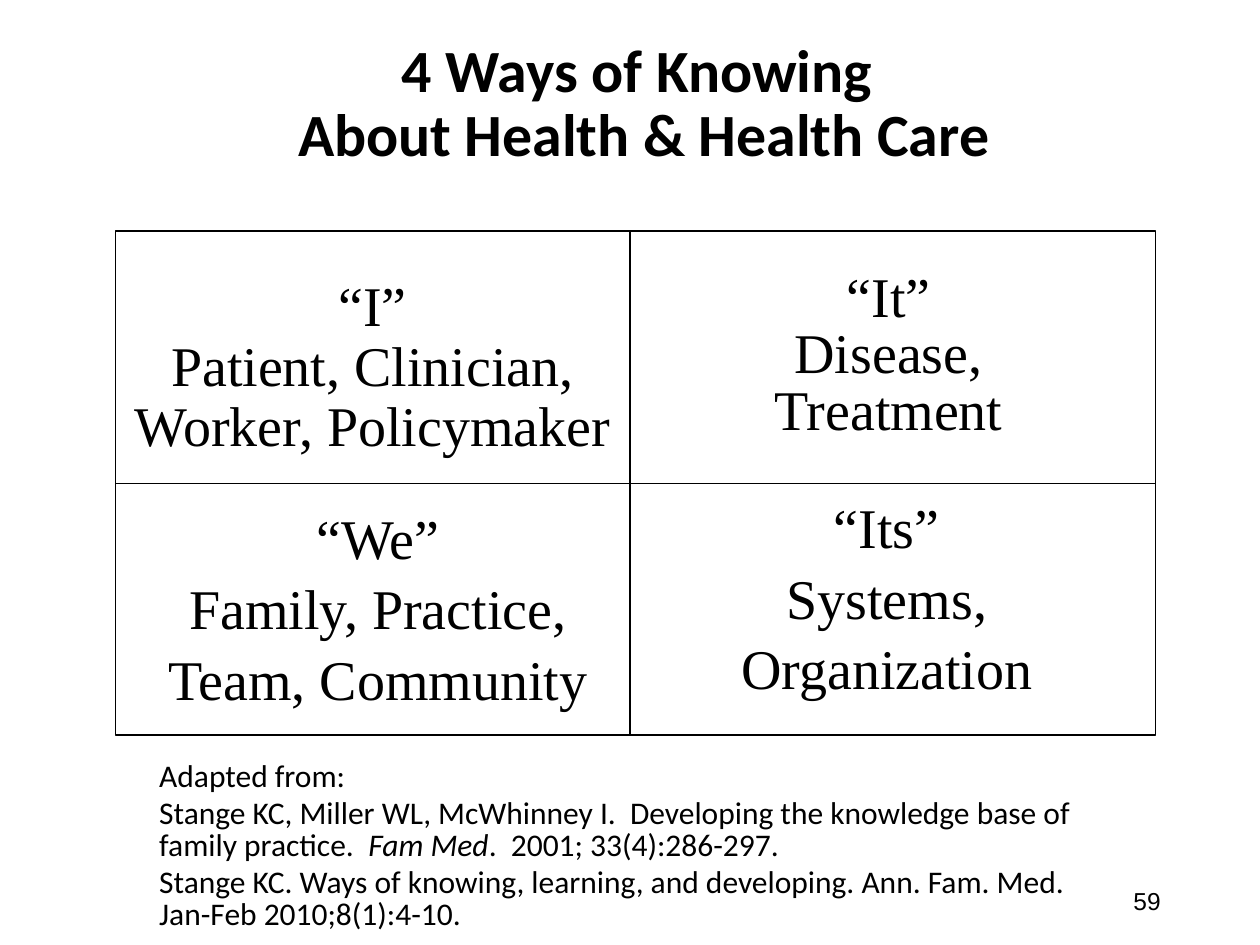
from lxml import etree
from pptx import Presentation
from pptx import util as u
from pptx.dml.color import RGBColor
from pptx.enum import shapes, text
from pptx.oxml.ns import qn

COLORS = {"ink": "000000", "paper": "FFFFFF"}
INK = RGBColor.from_string(COLORS["ink"])
CENTER = text.PP_ALIGN.CENTER

GRID_LEFT, GRID_TOP, GRID_WIDTH, GRID_HEIGHT = 2.33, 4.66, 20.96, 10.16
GRID_RIGHT, GRID_BOTTOM = GRID_LEFT + GRID_WIDTH, GRID_TOP + GRID_HEIGHT
MIDDLE_X, MIDDLE_Y = 12.7, GRID_TOP + GRID_HEIGHT / 2

QUADRANTS = [
    ((2.33, 5.5, 10.37, 3.71), ["“I”", "Patient, Clinician, Worker, Policymaker"], [0.89, 0.89]),
    ((15.03, 5.08, 5.77, 3.78), ["“It”", "Disease, Treatment"], [1.05, 0.84]),
    ((2.54, 9.95, 10.16, 4.32), ["“We”", "Family, Practice, Team, Community"], [1.05, 1.05]),
    ((12.7, 9.74, 10.36, 4.32), ["“Its”", "Systems, Organization"], [1.05, 1.05]),
]

SOURCES = [
    [("Adapted from:", False)],
    [
        ("Stange KC, Miller WL, McWhinney I.  Developing the knowledge base of family practice.  ", False),
        ("Fam Med", True),
        (".  2001; 33(4):286-297.", False),
    ],
    [("Stange KC. Ways of knowing, learning, and developing. Ann. Fam. Med. Jan-Feb 2010;8(1):4-10.", False)],
]


def add_frame(slide, box, anchor=text.MSO_ANCHOR.TOP):
    frame = slide.shapes.add_textbox(*map(u.Cm, box)).text_frame
    frame.word_wrap = True
    frame.vertical_anchor = anchor
    return frame


def add_paragraph(frame, index, align, spacing=1.0):
    paragraph = frame.add_paragraph() if index else frame.paragraphs[0]
    paragraph.alignment = align
    paragraph.line_spacing = spacing
    return paragraph


def add_run(paragraph, words, font, size, bold=False, italic=False):
    run = paragraph.add_run()
    run.text = words
    run.font.name = font
    run.font.size = u.Pt(size)
    run.font.bold = bold
    run.font.italic = italic
    run.font.color.rgb = INK


def add_title(slide):
    frame = add_frame(slide, (1.27, 0.85, 23.42, 2.54), text.MSO_ANCHOR.MIDDLE)
    title = add_paragraph(frame, 0, CENTER, 0.9)
    add_run(title, "4 Ways of Knowing ", "Calibri", 34.2, bold=True)
    title.add_line_break()
    add_run(title, "About Health & Health Care", "Calibri", 34.2, bold=True)


def add_sources(slide):
    frame = add_frame(slide, (2.96, 15.24, 19.26, 3.81))
    for index, source in enumerate(SOURCES):
        paragraph = add_paragraph(frame, index, text.PP_ALIGN.LEFT, 0.85)
        if index:
            paragraph.space_before = u.Pt(2.7)
        for words, italic in source:
            add_run(paragraph, words, "Calibri", 18, italic=italic)


def add_divider(slide, start, end):
    divider = slide.shapes.add_connector(
        shapes.MSO_CONNECTOR.STRAIGHT, *map(u.Cm, start + end))
    divider.line.color.rgb = INK
    divider.line.width = u.Pt(0.75)
    etree.SubElement(divider._element.spPr, qn("a:effectLst"))


def add_grid(slide):
    border = slide.shapes.add_shape(
        shapes.MSO_SHAPE.RECTANGLE,
        *map(u.Cm, (GRID_LEFT, GRID_TOP, GRID_WIDTH, GRID_HEIGHT)))
    border.shadow.inherit = False
    border.fill.background()
    border.line.color.rgb = INK
    border.line.width = u.Pt(0.75)
    add_divider(slide, (MIDDLE_X, GRID_TOP), (MIDDLE_X, GRID_BOTTOM))
    add_divider(slide, (GRID_LEFT, MIDDLE_Y), (GRID_RIGHT, MIDDLE_Y))


def add_quadrant(slide, box, lines, spacings):
    frame = add_frame(slide, box)
    for index, (words, spacing) in enumerate(zip(lines, spacings)):
        paragraph = add_paragraph(frame, index, CENTER, spacing)
        add_run(paragraph, words, "Times New Roman", 32)


def add_page_number(slide):
    frame = add_frame(slide, (17.93, 17.65, 5.72, 1.02), text.MSO_ANCHOR.MIDDLE)
    number = add_paragraph(frame, 0, text.PP_ALIGN.RIGHT)
    add_run(number, "59", "Arial", 14)


def main():
    deck = Presentation()
    deck.slide_width, deck.slide_height = u.Cm(25.4), u.Cm(19.05)
    slide = deck.slides.add_slide(deck.slide_layouts[6])
    slide.background.fill.solid()
    slide.background.fill.fore_color.rgb = RGBColor.from_string(COLORS["paper"])
    add_page_number(slide)
    add_title(slide)
    add_sources(slide)
    add_grid(slide)
    for quadrant in QUADRANTS:
        add_quadrant(slide, *quadrant)
    deck.save("out.pptx")


if __name__ == "__main__":
    main()
